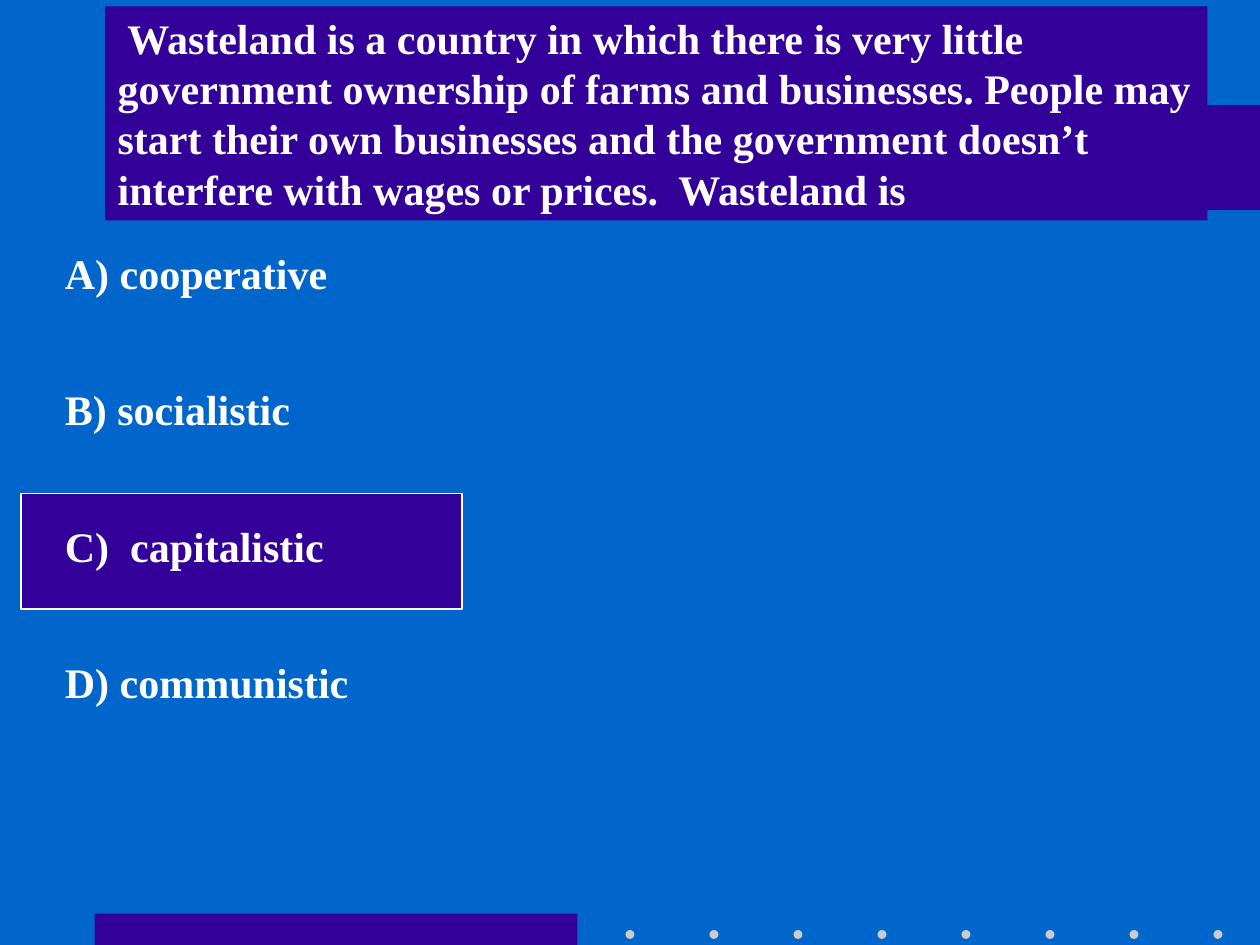
from pptx import Presentation
from pptx import util as u
from pptx.dml.color import RGBColor
from pptx.enum import shapes, text

COLS, ROWS = 120, 90
BLUE, PURPLE, WHITE, GREY = "0066CC", "330099", "FFFFFF", "CBCBCB"
RECT, OVAL = shapes.MSO_SHAPE.RECTANGLE, shapes.MSO_SHAPE.OVAL

QUERY = (" Wasteland is a country in which there is very little government "
         "ownership of farms and businesses. People may start their own "
         "businesses and the government doesn’t interfere with wages or "
         "prices.  Wasteland is")
ANSWERS = ["A) cooperative", "B) socialistic", "C)  capitalistic",
           "D) communistic"]


def paint(fill, hue):
    fill.solid()
    fill.fore_color.rgb = RGBColor.from_string(hue)


def write(frame, words, font="Times New Roman", size=24, hue=WHITE,
          bold=True, lead=28.7):
    frame.word_wrap = True
    frame.auto_size = text.MSO_AUTO_SIZE.NONE
    frame.vertical_anchor = text.MSO_ANCHOR.TOP
    para = frame.paragraphs[0]
    para.alignment = text.PP_ALIGN.LEFT
    para.line_spacing = u.Pt(lead)
    run = para.add_run()
    run.text = words
    run.font.name, run.font.size, run.font.bold = font, u.Pt(size), bold
    run.font.color.rgb = RGBColor.from_string(hue)


class Deck:
    """Slide on a grid of 120 columns and 90 rows; boxes are x, y, w, h."""

    def __init__(self):
        self.prs = Presentation()
        self.prs.slide_width, self.prs.slide_height = u.Inches(10), u.Inches(7.5)
        self.slide = self.prs.slides.add_slide(self.prs.slide_layouts[5])
        paint(self.slide.background.fill, BLUE)

    def grid(self, x, y, w, h):
        col = self.prs.slide_width / COLS
        row = self.prs.slide_height / ROWS
        return [round(n) for n in (x * col, y * row, w * col, h * row)]

    def shape(self, kind, box, hue, line=None):
        item = self.slide.shapes.add_shape(kind, *self.grid(*box))
        item.shadow.inherit = False
        paint(item.fill, hue)
        if line:
            paint(item.line.fill, line)
            item.line.width = u.Pt(1)
        else:
            item.line.fill.background()

    def title(self, words, box, hue):
        item = self.slide.shapes.title
        item.left, item.top, item.width, item.height = self.grid(*box)
        paint(item.fill, hue)
        write(item.text_frame, words)
        # Bring the title in front of the bands
        self.slide.shapes._spTree.append(item._element)

    def label(self, words, box):
        item = self.slide.shapes.add_textbox(*self.grid(*box))
        write(item.text_frame, words)


def main():
    deck = Deck()
    deck.shape(RECT, (9, 87, 46, 3), PURPLE)
    dot = 0.85
    for n in range(8):
        deck.shape(OVAL, (60 + 8 * n - dot / 2, 89 - dot / 2, dot, dot), GREY)
    deck.shape(RECT, (10, 10, 110, 10), PURPLE)
    deck.shape(RECT, (2, 47, 42, 11), PURPLE, line=WHITE)
    deck.title(QUERY, (10, 0.6, 105, 20.4), PURPLE)
    for n, words in enumerate(ANSWERS):
        deck.label(words, (5, 23 + 13 * n, 110, 6))
    deck.prs.save("out.pptx")


if __name__ == "__main__":
    main()
